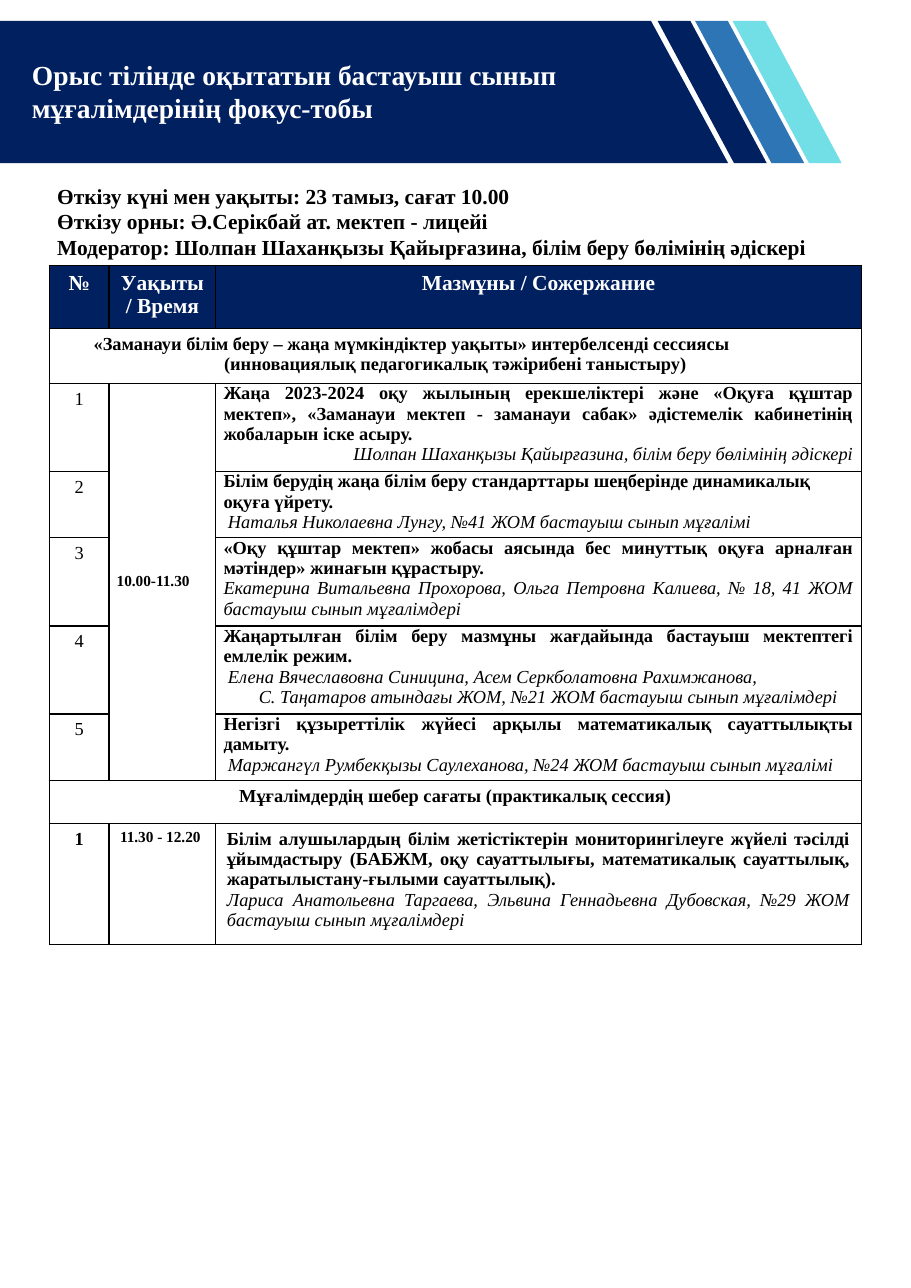
from pptx import Presentation
from pptx.dml.color import RGBColor
from pptx.enum.shapes import MSO_SHAPE as Shape
from pptx.enum.text import MSO_ANCHOR as Anchor, MSO_AUTO_SIZE as AutoSize, PP_ALIGN as Align
from pptx.oxml import parse_xml
from pptx.oxml.ns import nsdecls
from pptx.util import Inches, Pt

NAVY = RGBColor(0x00, 0x20, 0x60)
BLUE = RGBColor(0x2E, 0x75, 0xB6)
AQUA = RGBColor(0x71, 0xDF, 0xE5)
WHITE = RGBColor(0xFF, 0xFF, 0xFF)
BLACK = RGBColor(0x00, 0x00, 0x00)

BOLD = {"bold": True, "italic": False}
PLAIN = {"bold": False, "italic": False}
ITALIC = {"bold": False, "italic": True}


def write(paragraph, text, size, color, style, align=Align.LEFT, indent=0):
    paragraph.alignment = align
    if indent:
        paragraph._p.get_or_add_pPr().set("marL", str(Inches(indent)))
    run = paragraph.add_run()
    run.text = text
    look = {"name": "Times New Roman", "size": Pt(size), **style}
    for key, value in look.items():
        setattr(run.font, key, value)
    run.font.color.rgb = color


def fill_cell(cell, lines, size=12, color=BLACK, margins=(0.1, 0.05)):
    cell.margin_left = cell.margin_right = Inches(margins[0])
    cell.margin_top = cell.margin_bottom = Inches(margins[1])
    frame = cell.text_frame
    for i, (text, style, *layout) in enumerate(lines):
        paragraph = frame.add_paragraph() if i else frame.paragraphs[0]
        write(paragraph, text, size, color, style, *layout)


prs = Presentation()
prs.slide_width, prs.slide_height = Inches(8.27), Inches(11.69)
slide = prs.slides.add_slide(prs.slide_layouts[5])
shapes = slide.shapes

# Banner with three slanted stripes
outline = shapes.build_freeform(0, Inches(0.19))
outline.add_line_segments(
    [(Inches(x), Inches(y)) for x, y in [(5.91, 0.19), (6.61, 1.48), (0, 1.48)]])
banner = outline.convert_to_shape()
banner.shadow.inherit = False
banner.fill.solid()
banner.fill.fore_color.rgb = NAVY
banner.line.fill.background()

for i, color in enumerate([NAVY, BLUE, AQUA]):
    stripe = shapes.add_shape(Shape.PARALLELOGRAM, Inches(5.97 + i * 0.34), Inches(0.19),
                              Inches(0.99), Inches(1.29))
    stripe.adjustments[0] = 0.7
    stripe.rotation = 180
    stripe.element.spPr.xfrm.set("flipH", "1")
    stripe.shadow.inherit = False
    stripe.fill.solid()
    stripe.fill.fore_color.rgb = color
    stripe.line.fill.background()

# Title, brought in front of the banner
title = shapes.title
stripe.element.addnext(title.element)
title.left, title.top, title.width, title.height = map(Inches, (0.19, 0.48, 6.13, 0.71))
title.text_frame.word_wrap = True
title.text_frame.auto_size = AutoSize.NONE
title.text_frame.vertical_anchor = Anchor.TOP
write(title.text_frame.paragraphs[0],
      "Орыс тілінде оқытатын бастауыш сынып мұғалімдерінің фокус-тобы", 18, WHITE, BOLD)

# Date, place and moderator
details = shapes.add_textbox(Inches(0.42), Inches(1.61), Inches(7.39), Inches(0.81)).text_frame
details.word_wrap = True
for i, text in enumerate([
        "Өткізу күні мен уақыты: 23 тамыз, сағат 10.00",
        "Өткізу орны: Ә.Серікбай ат. мектеп - лицейі",
        "Модератор: Шолпан Шаханқызы Қайырғазина, білім беру бөлімінің әдіскері"]):
    paragraph = details.add_paragraph() if i else details.paragraphs[0]
    write(paragraph, text, 14, BLACK, BOLD)

# Programme table
row_heights = [0.57, 0.5, 0.8, 0.6, 0.8, 0.8, 0.6, 0.39, 1.1]
column_widths = [0.54, 0.97, 5.86]
programme = shapes.add_table(len(row_heights), len(column_widths), Inches(0.45), Inches(2.41),
                             Inches(sum(column_widths)), Inches(sum(row_heights))).table
programme.first_row = programme.horz_banding = False
for row, height in zip(programme.rows, row_heights):
    row.height = Inches(height)
for column, width in zip(programme.columns, column_widths):
    column.width = Inches(width)

# Cell fills and black borders
for r in range(len(row_heights)):
    for c in range(len(column_widths)):
        cell = programme.cell(r, c)
        if r == 0:
            cell.fill.solid()
            cell.fill.fore_color.rgb = NAVY
        else:
            cell.fill.background()
        for i, side in enumerate("LRTB"):
            cell._tc.get_or_add_tcPr().insert(i, parse_xml(
                f'<a:ln{side} {nsdecls("a")} w="{Pt(1)}"><a:solidFill>'
                f'<a:srgbClr val="{BLACK}"/></a:solidFill></a:ln{side}>'))

for first, last in [((1, 0), (1, 2)), ((2, 1), (6, 1)), ((7, 0), (7, 2))]:
    programme.cell(*first).merge(programme.cell(*last))

# Column headings
for c, text in enumerate(["№", "Уақыты / Время", "Мазмұны / Сожержание"]):
    fill_cell(programme.cell(0, c), [(text, BOLD, Align.CENTER)], 14, WHITE)

# Session headings
fill_cell(programme.cell(1, 0), [
    ("«Заманауи білім беру – жаңа мүмкіндіктер уақыты» интербелсенді сессиясы",
     BOLD, Align.LEFT, 0.3),
    ("(инновациялық педагогикалық тәжірибені таныстыру)", BOLD, Align.CENTER)])
fill_cell(programme.cell(7, 0),
          [("Мұғалімдердің шебер сағаты (практикалық сессия)", BOLD, Align.CENTER)])

# First session: talks and speakers
talks = [
    [("Жаңа 2023-2024 оқу жылының ерекшеліктері және «Оқуға құштар мектеп», «Заманауи "
      "мектеп - заманауи сабак» әдістемелік кабинетінің жобаларын іске асыру.",
      BOLD, Align.JUSTIFY),
     ("Шолпан Шаханқызы Қайырғазина, білім беру бөлімінің әдіскері", ITALIC, Align.RIGHT)],
    [("Білім берудің жаңа білім беру стандарттары шеңберінде динамикалық оқуға үйрету.", BOLD),
     ("Наталья Николаевна Лунгу, №41 ЖОМ бастауыш сынып мұғалімі", ITALIC, Align.LEFT, 0.04)],
    [("«Оқу құштар мектеп» жобасы аясында бес минуттық оқуға арналған мәтіндер» "
      "жинағын құрастыру.", BOLD, Align.JUSTIFY),
     ("Екатерина Витальевна Прохорова, Ольга Петровна Калиева, № 18, 41 ЖОМ бастауыш "
      "сынып мұғалімдері", ITALIC, Align.JUSTIFY)],
    [("Жаңартылған білім беру мазмұны жағдайында бастауыш мектептегі емлелік режим.",
      BOLD, Align.JUSTIFY),
     ("Елена Вячеславовна Синицина, Асем Серкболатовна Рахимжанова,",
      ITALIC, Align.LEFT, 0.04),
     ("С. Таңатаров атындағы ЖОМ, №21 ЖОМ бастауыш сынып мұғалімдері",
      ITALIC, Align.LEFT, 0.32)],
    [("Негізгі құзыреттілік жүйесі арқылы математикалық сауаттылықты дамыту.",
      BOLD, Align.JUSTIFY),
     ("Маржангүл Румбекқызы Саулеханова, №24 ЖОМ бастауыш сынып мұғалімі",
      ITALIC, Align.LEFT, 0.04)],
]
for number, talk in enumerate(talks, 1):
    fill_cell(programme.cell(number + 1, 0), [(str(number), PLAIN, Align.CENTER)])
    fill_cell(programme.cell(number + 1, 2), talk, margins=(0.07, 0))
session_time = programme.cell(2, 1)
session_time.vertical_anchor = Anchor.MIDDLE
fill_cell(session_time, [("10.00-11.30", BOLD)], 10, margins=(0.07, 0))

# Second session: master class
fill_cell(programme.cell(8, 0), [("1", BOLD, Align.CENTER)])
fill_cell(programme.cell(8, 1), [("11.30 - 12.20", BOLD)], 10)
fill_cell(programme.cell(8, 2), [
    ("Білім алушылардың білім жетістіктерін мониторингілеуге жүйелі тәсілді ұйымдастыру "
     "(БАБЖМ, оқу сауаттылығы, математикалық сауаттылық, жаратылыстану-ғылыми сауаттылық).",
     BOLD, Align.JUSTIFY),
    ("Лариса Анатольевна Таргаева, Эльвина Геннадьевна Дубовская, №29 ЖОМ бастауыш сынып "
     "мұғалімдері", ITALIC, Align.JUSTIFY)])

prs.save("out.pptx")
